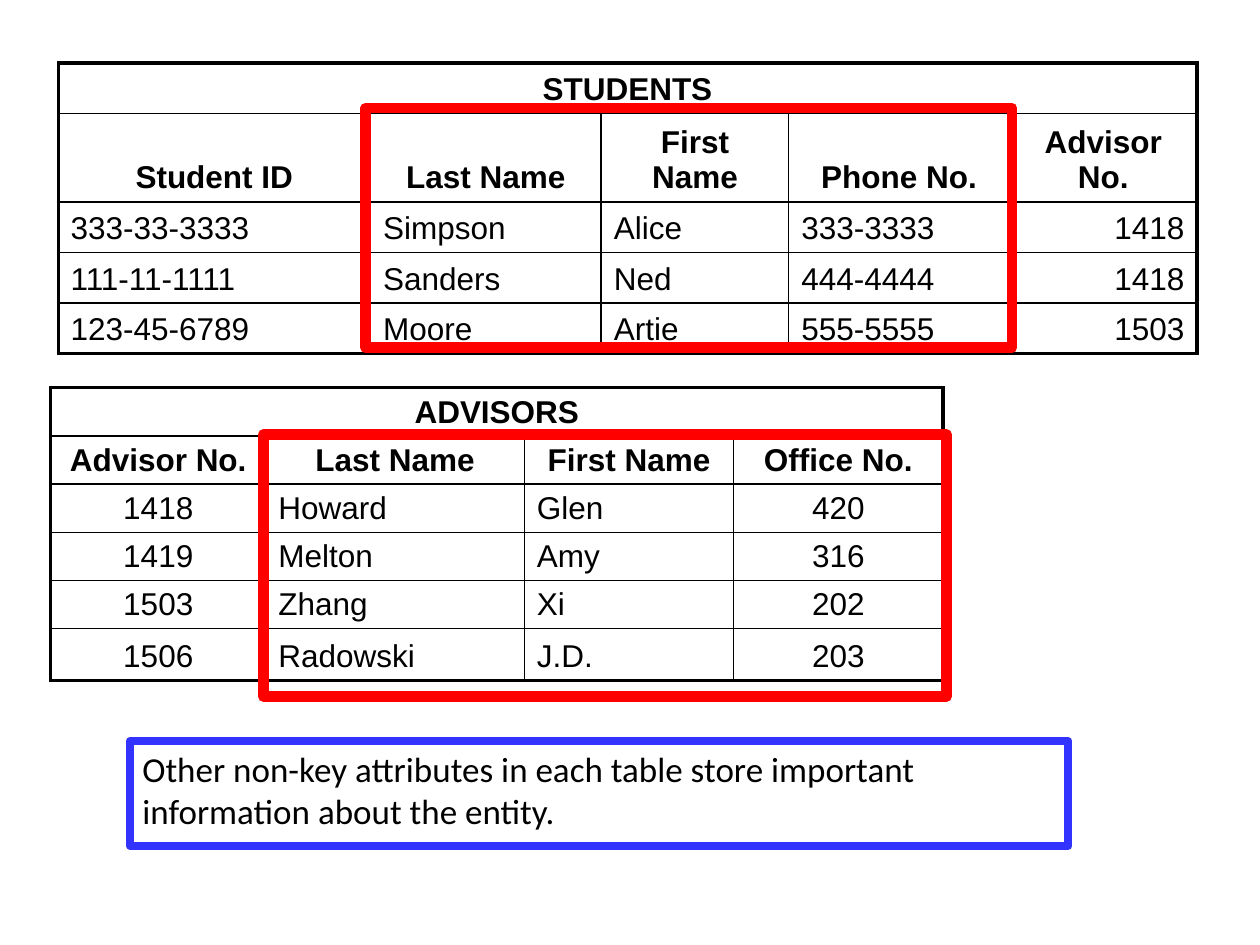
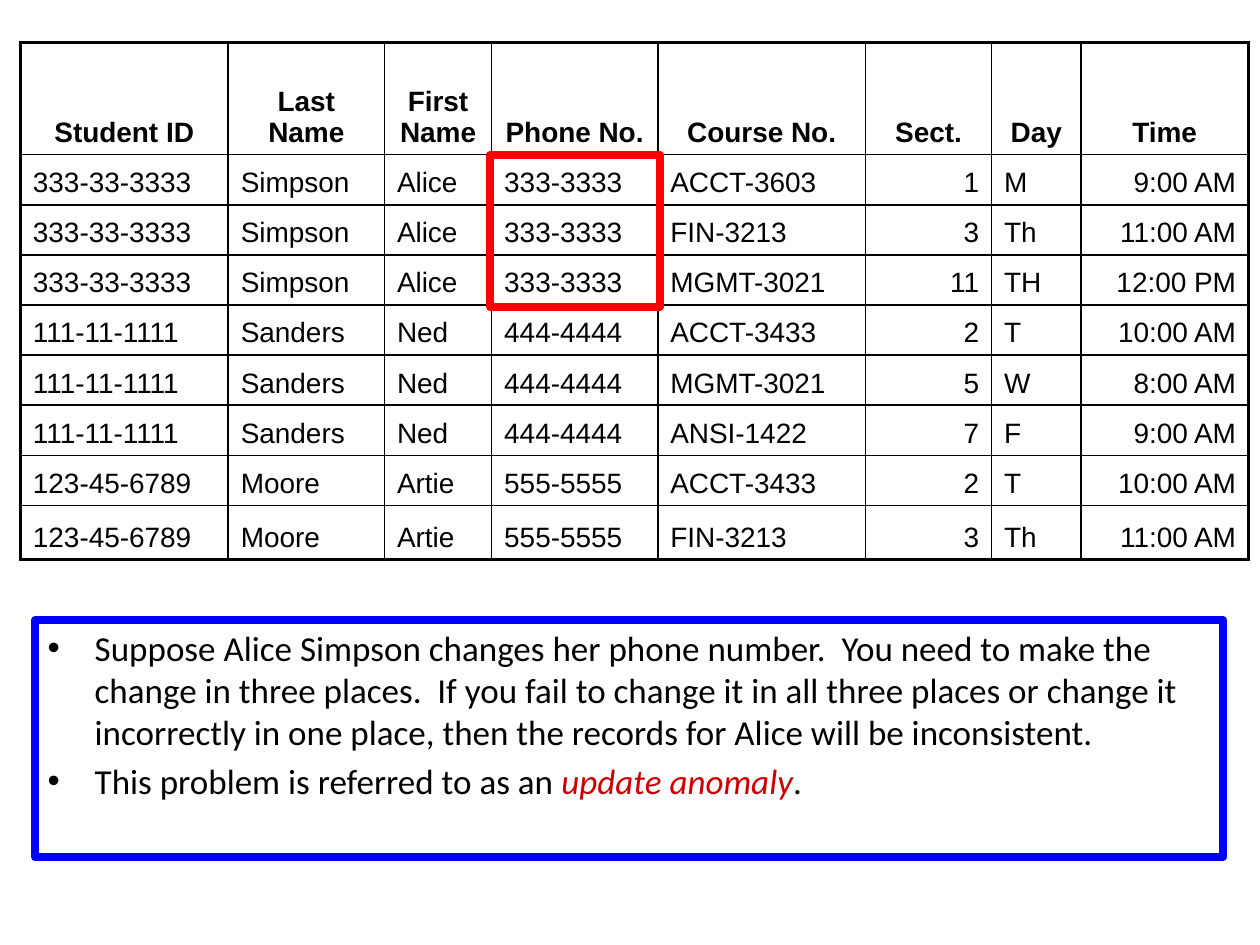
import pptx
import pptx.util
import pptx.dml.color
import pptx.enum.shapes
import pptx.enum.text
import pptx.oxml
import pptx.oxml.ns

Cm, Pt = pptx.util.Cm, pptx.util.Pt
Side = pptx.enum.text.PP_ALIGN
Anchor = pptx.enum.text.MSO_ANCHOR
ALIGN = {"l": Side.LEFT, "c": Side.CENTER, "r": Side.RIGHT}
BLACK, WHITE, RED = "000000", "FFFFFF", "FF0000"


def color(code):
    return pptx.dml.color.RGBColor.from_string(code)


def write(para, text, size=20, font="Calibri", ink=BLACK, bold=False,
          slant=False, align="l"):
    para.alignment = ALIGN[align]
    run = para.add_run()
    run.text = text
    run.font.size = Pt(size)
    run.font.name = font
    run.font.bold = bold
    run.font.italic = slant
    run.font.color.rgb = color(ink)


def bullet(para):
    para.space_before = Pt(4)
    props = para._p.get_or_add_pPr()
    props.set("marL", str(Cm(0.95)))
    props.set("indent", str(-Cm(0.95)))
    space = pptx.oxml.ns.nsdecls("a")
    props.append(pptx.oxml.parse_xml(f'<a:buFont {space} typeface="Arial"/>'))
    props.append(pptx.oxml.parse_xml(f'<a:buChar {space} char="•"/>'))


def edge(cell, side, width):
    space = pptx.oxml.ns.nsdecls("a")
    line = pptx.oxml.parse_xml(
        f'<a:ln{side} {space} w="{Pt(width)}"><a:solidFill>'
        f'<a:srgbClr val="{BLACK}"/></a:solidFill></a:ln{side}>')
    cell._tc.get_or_add_tcPr().append(line)


class Deck:
    def __init__(self):
        self.file = pptx.Presentation()
        self.file.slide_width = Cm(25.4)
        self.file.slide_height = Cm(19.05)
        self.slide = None

    def page(self):
        self.slide = self.file.slides.add_slide(self.file.slide_layouts[6])

    def box(self, place, line, width, fill=None):
        shape = self.slide.shapes.add_shape(
            pptx.enum.shapes.MSO_SHAPE.RECTANGLE, *map(Cm, place))
        shape.shadow.inherit = False
        if fill:
            shape.fill.solid()
            shape.fill.fore_color.rgb = color(fill)
        else:
            shape.fill.background()
        shape.line.color.rgb = color(line)
        shape.line.width = Pt(width)
        return shape

    def note(self, place, line, paras, marks=False):
        frame = self.box(place, line, 4.5, WHITE).text_frame
        frame.word_wrap = True
        frame.vertical_anchor = Anchor.TOP
        for index, parts in enumerate(paras):
            para = frame.add_paragraph() if index else frame.paragraphs[0]
            if marks:
                bullet(para)
            for text, style in parts:
                write(para, text, **style)

    def table(self, left, top, wide, high, rows, sides, size, title=None):
        grid = [[title] + [""] * (len(wide) - 1)] if title else []
        grid += rows
        heads = 2 if title else 1
        shape = self.slide.shapes.add_table(
            len(grid), len(wide), Cm(left), Cm(top), Cm(sum(wide)), Cm(sum(high)))
        table = shape.table
        table.first_row = table.horz_banding = False
        for col, width in zip(table.columns, wide):
            col.width = Cm(width)
        for row, height in zip(table.rows, high):
            row.height = Cm(height)
        if title:
            table.cell(0, 0).merge(table.cell(0, len(wide) - 1))
        for r, row in enumerate(grid):
            for c, text in enumerate(row):
                cell = table.cell(r, c)
                if cell.is_spanned:
                    continue
                span = cell.span_width if cell.is_merge_origin else 1
                outer = {"L": c == 0, "R": c + span == len(wide),
                         "T": r == 0, "B": r == len(grid) - 1}
                for side, thick in outer.items():
                    edge(cell, side, 2 if thick else 1)
                cell.fill.background()
                cell.vertical_anchor = Anchor.BOTTOM
                head = r < heads
                write(cell.text_frame.paragraphs[0], text, size=size, font="Arial",
                      bold=head, align="c" if head else sides[c])


def keys(deck):
    deck.page()
    deck.table(1.02, 7.82, [4.34, 5.21, 4.22, 4.22], [0.97] * 5 + [1.04], [
        ["Advisor No.", "Last Name", "First Name", "Office No."],
        ["1418", "Howard", "Glen", "420"],
        ["1419", "Melton", "Amy", "316"],
        ["1503", "Zhang", "Xi", "202"],
        ["1506", "Radowski", "J.D.", "203"],
    ], "cllc", 18, "ADVISORS")
    deck.note((2.62, 14.94, 18.92, 2.11), "3333FF", [[
        ("Other non-key attributes in each table store important "
         "information about the entity.", {})]])
    deck.table(1.17, 1.27, [6.3, 4.65, 3.78, 4.45, 3.78],
               [1.02, 1.78] + [1.02] * 3, [
        ["Student ID", "Last Name", "First Name", "Phone No.", "Advisor No."],
        ["333-33-3333", "Simpson", "Alice", "333-3333", "1418"],
        ["111-11-1111", "Sanders", "Ned", "444-4444", "1418"],
        ["123-45-6789", "Moore", "Artie", "555-5555", "1503"],
    ], "llllr", 18, "STUDENTS")
    for place in (7.37, 2.18, 13.03, 4.83), (5.31, 8.76, 13.77, 5.28):
        deck.box(place, RED, 6)


def update(deck):
    deck.page()
    alice = ["333-33-3333", "Simpson", "Alice", "333-3333"]
    ned = ["111-11-1111", "Sanders", "Ned", "444-4444"]
    artie = ["123-45-6789", "Moore", "Artie", "555-5555"]
    deck.table(0.41, 0.86, [4.19, 3.15, 2.16, 3.35, 4.19, 2.54, 1.8, 3.38],
               [2.26] + [1.01] * 7 + [1.09], [
        ["Student ID", "Last Name", "First Name", "Phone No.",
         "Course No.", "Sect.", "Day", "Time"],
        alice + ["ACCT-3603", "1", "M", "9:00 AM"],
        alice + ["FIN-3213", "3", "Th", "11:00 AM"],
        alice + ["MGMT-3021", "11", "TH", "12:00 PM"],
        ned + ["ACCT-3433", "2", "T", "10:00 AM"],
        ned + ["MGMT-3021", "5", "W", "8:00 AM"],
        ned + ["ANSI-1422", "7", "F", "9:00 AM"],
        artie + ["ACCT-3433", "2", "T", "10:00 AM"],
        artie + ["FIN-3213", "3", "Th", "11:00 AM"],
    ], "lllllrlr", 16)
    deck.note((0.71, 12.5, 23.95, 4.78), "0000FF", [
        [("Suppose Alice Simpson changes her phone number.  You need to make "
          "the change in three places.  If you fail to change it in all three "
          "places or change it incorrectly in one place, then the records for "
          "Alice will be inconsistent.", {})],
        [("This problem is referred to as an ", {}),
         ("update anomaly", {"ink": "CC0000", "slant": True}),
         (".", {})],
    ], marks=True)
    deck.box((9.88, 3.12, 3.43, 3.07), RED, 4.5)


def main():
    deck = Deck()
    keys(deck)
    update(deck)
    deck.file.save("out.pptx")


if __name__ == "__main__":
    main()
